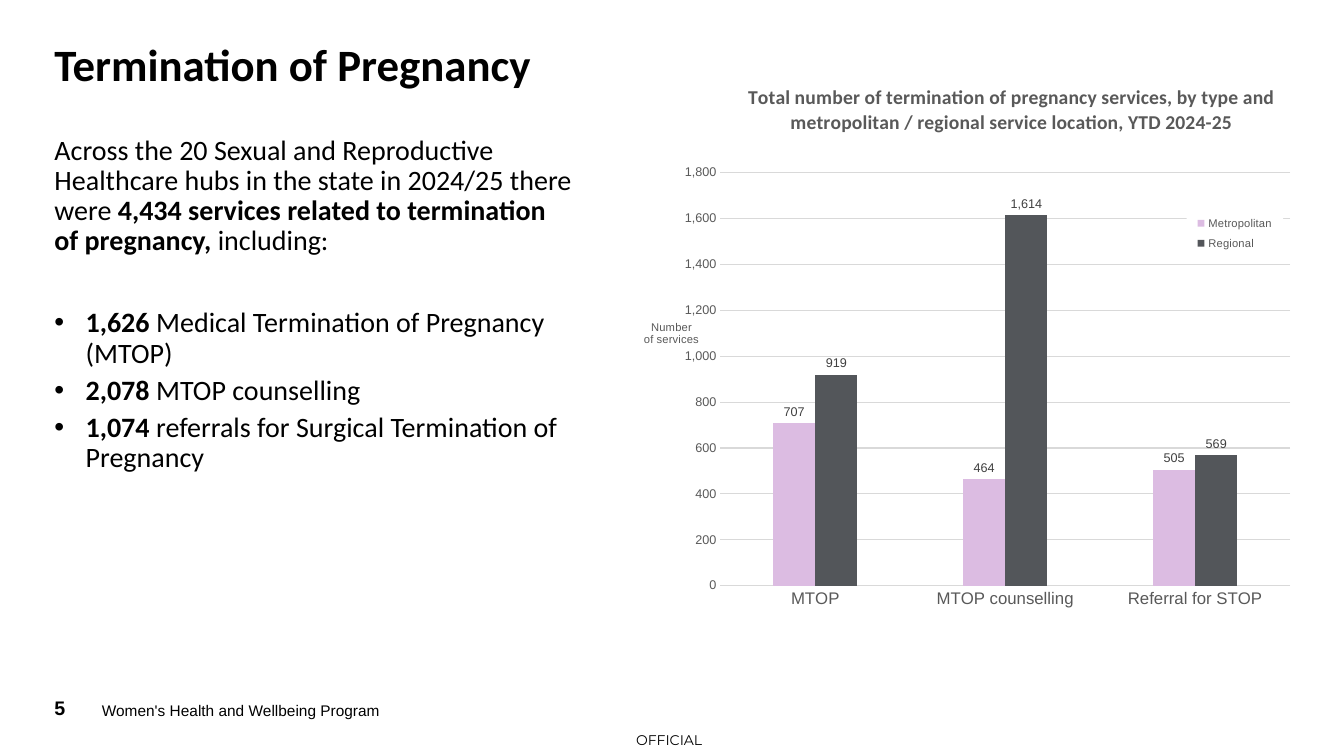
from lxml import etree
from pptx import Presentation
from pptx import util as u
from pptx.chart.data import CategoryChartData
from pptx.dml.color import RGBColor
from pptx.enum import chart as ch, text as tx
from pptx.oxml import parse_xml
from pptx.oxml.ns import nsdecls, qn

WIDTH, HEIGHT = u.Inches(13.33), u.Inches(7.5)
BLACK, GREY, LABEL_GREY, RULE = "000000", "595959", "404040", "D9D9D9"
SERVICES = ["MTOP", "MTOP counselling", "Referral for STOP"]
LOCATIONS = [("Metropolitan", "DCBCE2", [707, 464, 505]),
             ("Regional", "53565A", [919, 1614, 569])]
BULLETS = [("1,626 ", "Medical Termination of Pregnancy (MTOP)"),
           ("2,078 ", "MTOP counselling"),
           ("1,074", " referrals for Surgical Termination of Pregnancy")]


def colour(code):
    return RGBColor.from_string(code)


def area(left, top, width, height):
    """Turn percentages of the slide into lengths."""
    return [round(share * side / 100) for share, side in
            zip((left, top, width, height), (WIDTH, HEIGHT) * 2)]


def style(font, size, name="Arial", color=BLACK, bold=False):
    font.size, font.name, font.bold = u.Pt(size), name, bold
    font.color.rgb = colour(color)


def write(paragraph, words, **fmt):
    run = paragraph.add_run()
    run.text = words
    style(run.font, **fmt)


def text_area(slide, *shares, anchor=tx.MSO_ANCHOR.TOP, inset=0, wrap=True):
    frame = slide.shapes.add_textbox(*area(*shares)).text_frame
    frame.word_wrap, frame.vertical_anchor = wrap, anchor
    frame.margin_left = u.Inches(inset)
    frame.margin_right = frame.margin_top = frame.margin_bottom = 0
    return frame


def add_bullet(paragraph):
    props = paragraph._p.get_or_add_pPr()
    indent = u.Inches(0.31)
    props.set("marL", str(indent))
    props.set("indent", str(-indent))
    etree.SubElement(props, qn("a:buFont")).set("typeface", "Arial")
    etree.SubElement(props, qn("a:buChar")).set("char", "•")


def set_layout(element, index, inner=False, **shares):
    """Fix a chart part at shares of the chart's size."""
    for old in element.findall(qn("c:layout")):
        element.remove(old)
    layout = etree.Element(qn("c:layout"))
    manual = etree.SubElement(layout, qn("c:manualLayout"))
    settings = [("layoutTarget", "inner")] if inner else []
    settings += [("xMode", "edge"), ("yMode", "edge"), *shares.items()]
    for tag, value in settings:
        etree.SubElement(manual, qn(f"c:{tag}")).set("val", str(value))
    element.insert(index, layout)


def add_summary(slide):
    body = text_area(slide, 4.05, 18, 38.63, 59.6)
    look = dict(size=20, name="Calibri")
    intro = body.paragraphs[0]
    intro.line_spacing = 0.9
    write(intro, "Across the 20 Sexual and Reproductive Healthcare hubs in the "
                 "state in 2024/25 there were ", **look)
    write(intro, "4,434 services related to termination of pregnancy, ", bold=True, **look)
    write(intro, "including:", **look)
    for index, (count, service) in enumerate(BULLETS):
        item = body.add_paragraph()
        add_bullet(item)
        item.line_spacing = 0.9
        item.space_before = u.Pt(5 if index else 37)
        write(item, count, bold=True, **look)
        write(item, service, **look)


def format_axes(chart):
    categories, values = chart.category_axis, chart.value_axis
    for axis, size in ((categories, 12), (values, 9)):
        axis.major_tick_mark = axis.minor_tick_mark = ch.XL_TICK_MARK.NONE
        style(axis.tick_labels.font, size, color=GREY)
    values.minimum_scale, values.maximum_scale, values.major_unit = 0, 1800, 200
    values.tick_labels.number_format = "#,##0"
    values.tick_labels.number_format_is_linked = False
    values.format.line.fill.background()
    for line in (categories.format.line, values.major_gridlines.format.line):
        line.color.rgb, line.width = colour(RULE), u.Pt(0.75)

    title = values.axis_title
    frame = title.text_frame
    for index, words in enumerate(("Number", "of services")):
        paragraph = frame.add_paragraph() if index else frame.paragraphs[0]
        write(paragraph, words, size=8, color=GREY)
    frame._txBody.bodyPr.set("rot", "0")
    frame._txBody.bodyPr.set("vert", "horz")
    set_layout(title._element, 1, x=0.02, y=0.43)


def format_legend(chart):
    chart.has_legend = True
    legend = chart.legend
    legend.position = ch.XL_LEGEND_POSITION.RIGHT
    legend.include_in_layout = False
    style(legend.font, 8, color=GREY)
    set_layout(legend._element, 1, x=0.81, y=0.25, w=0.14, h=0.08)
    white = parse_xml(f'<c:spPr {nsdecls("c", "a")}><a:solidFill>'
                      '<a:srgbClr val="FFFFFF"/></a:solidFill></c:spPr>')
    legend._element.find(qn("c:txPr")).addprevious(white)


def add_services_chart(slide):
    data = CategoryChartData(number_format="#,##0")
    data.categories = SERVICES
    for location, _, counts in LOCATIONS:
        data.add_series(location, counts)
    chart = slide.shapes.add_chart(ch.XL_CHART_TYPE.COLUMN_CLUSTERED,
                                   *area(46.66, 8.27, 51.39, 77.87), data).chart
    style(chart.font, 10)
    chart.has_title = True
    write(chart.chart_title.text_frame.paragraphs[0],
          "Total number of termination of pregnancy services, by type and "
          "metropolitan / regional service location, YTD 2024-25",
          size=14, name="Calibri", color=GREY, bold=True)
    set_layout(chart.chart_title._element, 1, x=0.17, y=0.03)

    plot = chart.plots[0]
    plot.gap_width, plot.overlap, plot.vary_by_categories = 250, 0, False
    for series, (_, fill, _) in zip(plot.series, LOCATIONS):
        series.format.fill.solid()
        series.format.fill.fore_color.rgb = colour(fill)
        labels = series.data_labels
        labels.show_value = True
        labels.position = ch.XL_LABEL_POSITION.OUTSIDE_END
        labels.number_format, labels.number_format_is_linked = "#,##0", False
        style(labels.font, 9, color=LABEL_GREY)
    format_axes(chart)
    format_legend(chart)
    set_layout(chart._chartSpace.chart.plotArea, 0, inner=True,
               x=0.135, y=0.187, w=0.825, h=0.702)


def add_footer(slide):
    bottom = tx.MSO_ANCHOR.BOTTOM
    marking = text_area(slide, 47.34, 96.8, 5.7, 2.27, wrap=False)
    write(marking.paragraphs[0], "OFFICIAL", size=10, name="Montserrat")
    program = text_area(slide, 6.98, 89.87, 33.76, 5.33, anchor=bottom, inset=0.08)
    write(program.paragraphs[0], "Women's Health and Wellbeing Program", size=11)
    number = text_area(slide, 4.05, 89.87, 2.93, 5.33, anchor=bottom)
    write(number.paragraphs[0], "5", size=14, bold=True)


def main():
    deck = Presentation()
    deck.slide_width, deck.slide_height = WIDTH, HEIGHT
    slide = deck.slides.add_slide(deck.slide_layouts[6])
    heading = text_area(slide, 4.05, 6, 63, 8.67).paragraphs[0]
    heading.line_spacing = 0.85
    write(heading, "Termination of Pregnancy", size=32, name="Calibri", bold=True)
    add_summary(slide)
    add_services_chart(slide)
    add_footer(slide)
    deck.save("out.pptx")


if __name__ == "__main__":
    main()
